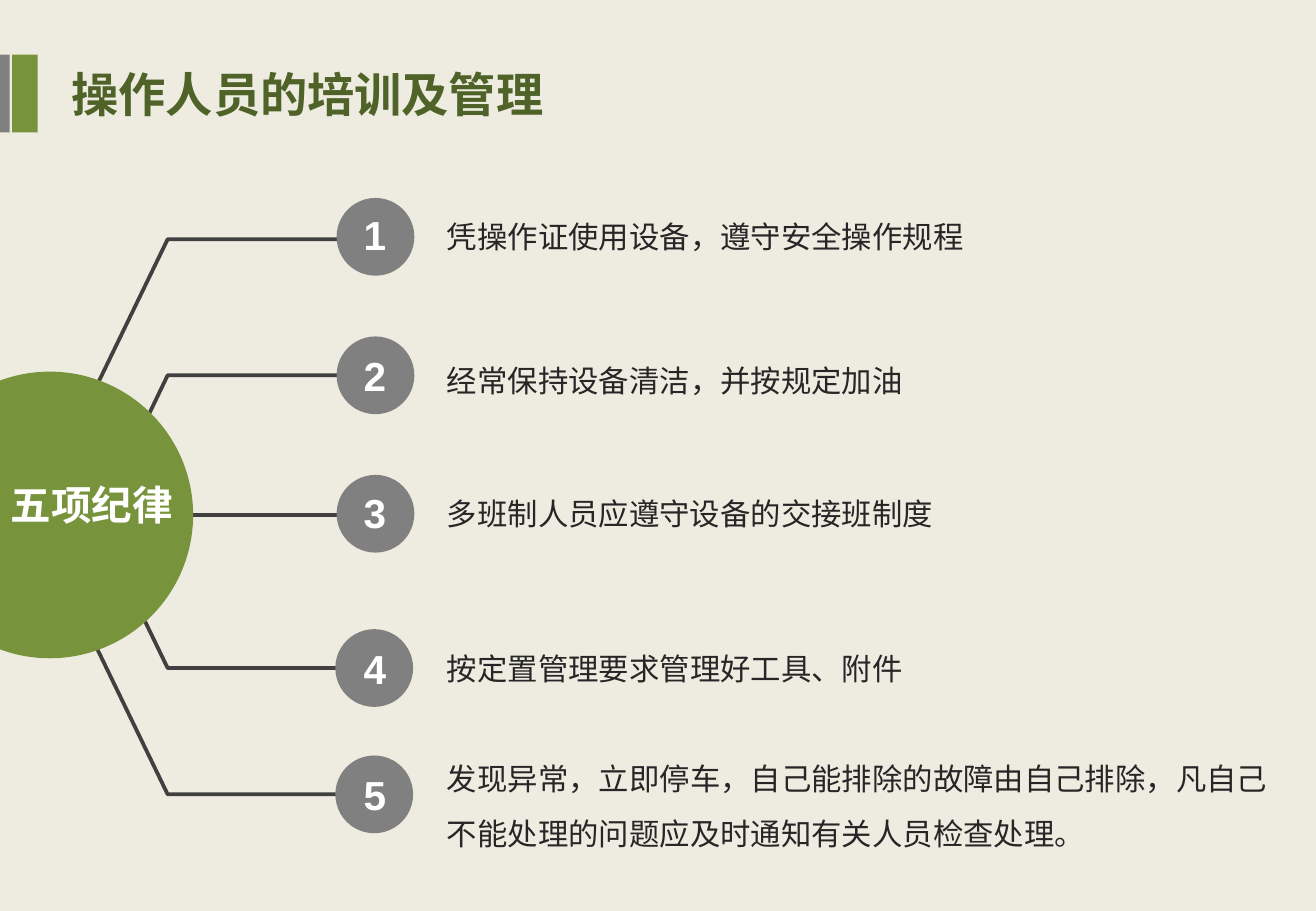
import lxml.etree
import pptx
import pptx.dml.color
import pptx.enum.shapes
import pptx.enum.text
import pptx.oxml.ns
import pptx.util

Inches = pptx.util.Inches
Pt = pptx.util.Pt
SHAPE = pptx.enum.shapes.MSO_SHAPE
ALIGN = pptx.enum.text.PP_ALIGN
HAN = "Noto Sans CJK SC"
GREEN, GRAY, DARK, WHITE = "77933C", "808080", "404040", "FFFFFF"

# Rule: circle left, circle top, number top, text top, text width, text
RULES = [
    (2.77, 1.63, 1.68, 1.75, 4.49, "凭操作证使用设备，遵守安全操作规程"),
    (2.77, 2.77, 2.84, 2.93, 3.99, "经常保持设备清洁，并按规定加油"),
    (2.77, 3.91, 3.97, 4.03, 4.24, "多班制人员应遵守设备的交接班制度"),
    (2.76, 5.18, 5.25, 5.3, 3.99, "按定置管理要求管理好工具、附件"),
    (2.76, 6.22, 6.29, 6.06, 7.08,
     "发现异常，立即停车，自己能排除的故障由自己排除，凡自己不能处理的问题应及时通知有关人员检查处理。"),
]
# Branch: height at the hub, height at the circle
BRANCHES = [(3.23, 1.97), (5.28, 6.54), (4.36, 3.09), (4.24, 5.5)]


def color(code):
    return pptx.dml.color.RGBColor.from_string(code)


def stroke(line):
    line.color.rgb = color(DARK)
    line.width = Pt(2.25)


def add_block(slide, kind, left, top, width, height, fill):
    block = slide.shapes.add_shape(
        kind, Inches(left), Inches(top), Inches(width), Inches(height))
    block.shadow.inherit = False
    block.fill.solid()
    block.fill.fore_color.rgb = color(fill)
    block.line.fill.background()


def add_branch(slide, start, end):
    pen = slide.shapes.build_freeform(Inches(0.77), Inches(start))
    pen.add_line_segments(
        [(Inches(1.38), Inches(end)), (Inches(3.3), Inches(end))], close=False)
    branch = pen.convert_to_shape()
    branch.shadow.inherit = False
    branch.fill.background()
    stroke(branch.line)


def add_spoke(slide, left, right, y):
    spoke = slide.shapes.add_connector(
        pptx.enum.shapes.MSO_CONNECTOR.STRAIGHT,
        Inches(left), Inches(y), Inches(right), Inches(y))
    stroke(spoke.line)
    props = spoke._element.spPr
    lxml.etree.SubElement(props, pptx.oxml.ns.qn("a:effectLst"))


def add_text(slide, text, left, top, width, height, size, tint,
             face=HAN, bold=False, align=ALIGN.LEFT, wrap=True, space=None):
    box = slide.shapes.add_textbox(
        Inches(left), Inches(top), Inches(width), Inches(height))
    frame = box.text_frame
    frame.text = text
    frame.word_wrap = wrap
    frame.auto_size = pptx.enum.text.MSO_AUTO_SIZE.SHAPE_TO_FIT_TEXT
    para = frame.paragraphs[0]
    para.alignment = align
    para.line_spacing = space
    font = para.runs[0].font
    font.size = Pt(size)
    font.bold = bold
    font.color.rgb = color(tint)
    font.name = face
    # East Asian glyphs take their own face
    props = para.runs[0]._r.get_or_add_rPr()
    lxml.etree.SubElement(props, pptx.oxml.ns.qn("a:ea"), typeface=face)


def main():
    deck = pptx.Presentation()
    deck.slide_width = Inches(10.83)
    deck.slide_height = Inches(7.5)
    slide = deck.slides.add_slide(deck.slide_layouts[6])
    slide.background.fill.solid()
    slide.background.fill.fore_color.rgb = color("EEECE1")

    # Lines from the hub
    for start, end in BRANCHES:
        add_branch(slide, start, end)
    add_spoke(slide, 1.55, 3.3, 4.24)

    # Title with its bars
    add_block(slide, SHAPE.RECTANGLE, 0.1, 0.45, 0.21, 0.64, GREEN)
    add_block(slide, SHAPE.RECTANGLE, 0, 0.45, 0.08, 0.64, GRAY)
    add_text(slide, "操作人员的培训及管理", 0.49, 0.49, 7.56, 0.57,
             28, "4F6228", bold=True)

    # Hub
    add_block(slide, SHAPE.OVAL, -0.77, 3.06, 2.36, 2.36, GREEN)
    add_text(slide, "五项纪律", -0.02, 3.9, 1.55, 0.5,
             24, WHITE, bold=True, align=ALIGN.CENTER)

    # Numbered rules
    for num, (left, top, mark, row, width, text) in enumerate(RULES, 1):
        add_block(slide, SHAPE.OVAL, left, top, 0.64, 0.64, GRAY)
        add_text(slide, str(num), 2.85, mark, 0.47, 0.5,
                 24, WHITE, face="Arial", bold=True, align=ALIGN.CENTER)
        long = num == len(RULES)
        add_text(slide, text, 3.58, row, width, 1.01 if long else 0.4,
                 18, "262626", wrap=long, space=1.5 if long else None)

    deck.save("out.pptx")


if __name__ == "__main__":
    main()
